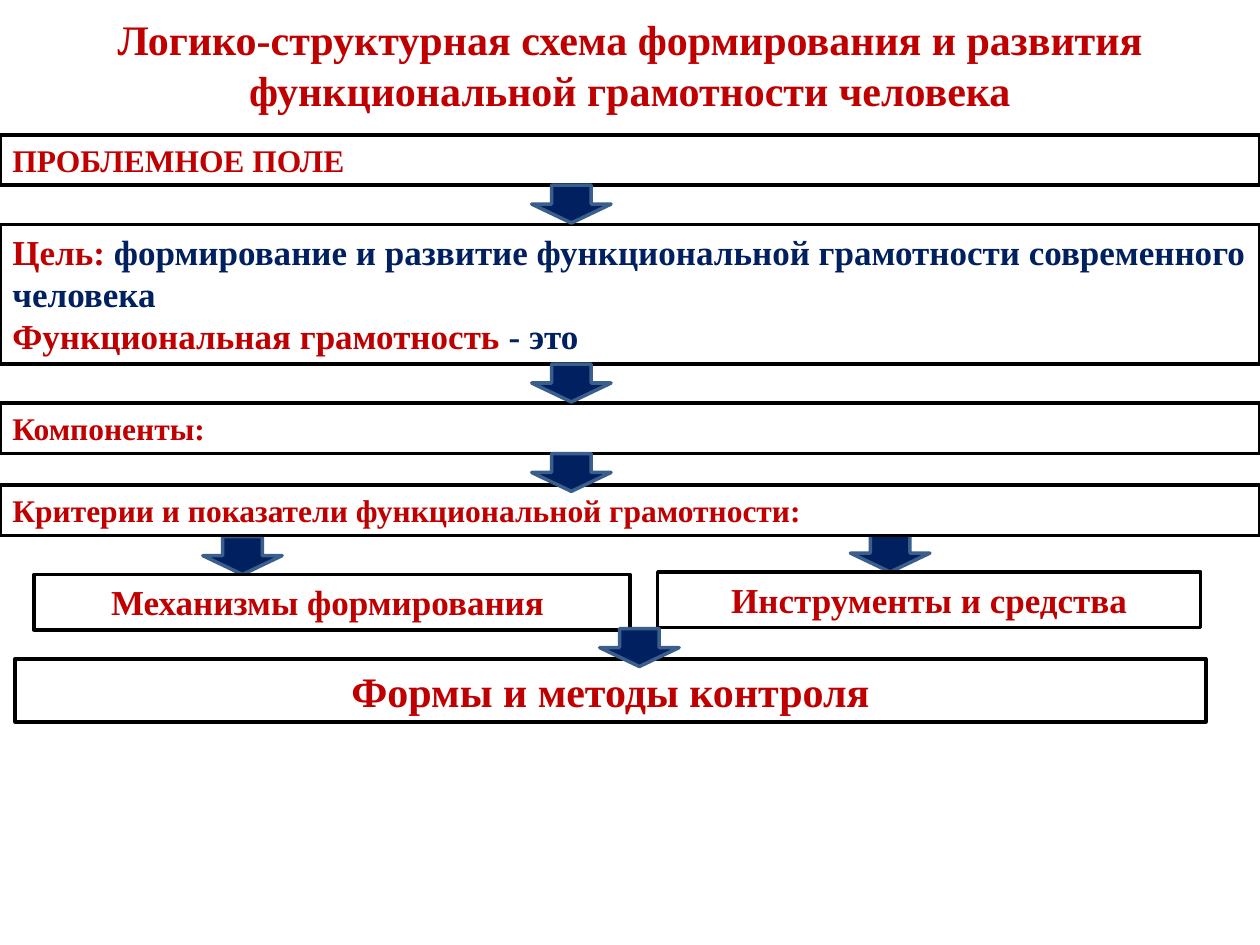
import pptx
import pptx.util
import pptx.dml.color
import pptx.enum.shapes
import pptx.enum.text

COLS, ROWS = 100, 75
ARROW_W, ARROW_H = 6.3, 3
SHAPE = pptx.enum.shapes.MSO_SHAPE
ALIGN = pptx.enum.text.PP_ALIGN
ANCHOR = pptx.enum.text.MSO_ANCHOR
AUTO = pptx.enum.text.MSO_AUTO_SIZE


def rgb(value):
    return pptx.dml.color.RGBColor.from_string(value)


THEME = {
    "font": "Times New Roman",
    "red": rgb("C00000"),
    "navy": rgb("002060"),
    "edge": rgb("3A5F8C"),
    "black": rgb("000000"),
    "white": rgb("FFFFFF"),
    "title": pptx.util.Pt(24),
    "goal": pptx.util.Pt(20),
    "label": pptx.util.Pt(18),
    "line": pptx.util.Pt(2),
}


def set_all(target, values):
    for name, value in values.items():
        setattr(target, name, value)


def to_emu(prs, box):
    x, y, w, h = box
    dx, dy = prs.slide_width / COLS, prs.slide_height / ROWS
    return [round(v) for v in (x * dx, y * dy, w * dx, h * dy)]


def write(tf, paragraphs, size, align, anchor):
    set_all(tf, {"word_wrap": True, "auto_size": AUTO.NONE, "vertical_anchor": anchor})
    for i, runs in enumerate(paragraphs):
        p = tf.add_paragraph() if i else tf.paragraphs[0]
        p.alignment = align
        for text, color in runs:
            r = p.add_run()
            r.text = text
            set_all(r.font, {"name": THEME["font"], "size": THEME[size], "bold": True})
            r.font.color.rgb = THEME[color]


def add_shape(prs, slide, kind, box, fill, line):
    sp = slide.shapes.add_shape(kind, *to_emu(prs, box))
    sp.shadow.inherit = False
    sp.fill.solid()
    sp.fill.fore_color.rgb = THEME[fill]
    sp.line.color.rgb = THEME[line]
    sp.line.width = THEME["line"]
    return sp


def add_box(prs, slide, box, paragraphs, size, align=ALIGN.LEFT):
    sp = add_shape(prs, slide, SHAPE.RECTANGLE, box, "white", "black")
    write(sp.text_frame, paragraphs, size, align, ANCHOR.TOP)


def add_arrow(prs, slide, x, y):
    add_shape(prs, slide, SHAPE.DOWN_ARROW, (x, y, ARROW_W, ARROW_H), "navy", "edge")


def add_title(prs, slide, box, text):
    sp = slide.shapes.title
    set_all(sp, dict(zip(("left", "top", "width", "height"), to_emu(prs, box))))
    write(sp.text_frame, [[(text, "red")]], "title", ALIGN.CENTER, ANCHOR.TOP)


def add_stages(prs, slide, box, stages):
    x, y, w, h = box
    arrow_x = x + 0.422 * w
    for top, height, size, paragraphs in stages:
        add_box(prs, slide, (x, y + top, w, height), paragraphs, size)
    for top, height, *rest in stages[:-1]:
        add_arrow(prs, slide, arrow_x, y + top + height)


def add_branches(prs, slide, box, branches):
    x, y, w, h = box
    for left, top, width, arrow_x, text in branches:
        add_arrow(prs, slide, x + arrow_x, y + top)
        add_box(prs, slide, (x + left, y + top + ARROW_H, width, h - ARROW_H),
                [[(text, "red")]], "goal", ALIGN.CENTER)


def add_control(prs, slide, box, text):
    x, y, w, h = box
    add_box(prs, slide, box, [[(text, "red")]], "title", ALIGN.CENTER)
    add_arrow(prs, slide, x + 46.4, y - 2.4)


def main():
    prs = pptx.Presentation()
    prs.slide_width = pptx.util.Inches(10)
    prs.slide_height = pptx.util.Inches(7.5)
    slide = prs.slides.add_slide(prs.slide_layouts[5])

    add_title(prs, slide, (1.2, 0.6, 97.6, 12.1),
              "Логико-структурная схема формирования и развития "
              "функциональной грамотности человека")
    add_branches(prs, slide, (2.7, 42.4, 92.6, 7.4), [
        (0, 0.2, 47.3, 13.4, "Механизмы формирования "),
        (49.5, 0, 43.1, 64.8, "Инструменты и средства"),
    ])
    add_stages(prs, slide, (0, 10.7, COLS, 31.8), [
        (0, 4, "label", [[("ПРОБЛЕМНОЕ ПОЛЕ", "red")]]),
        (7.1, 11.1, "goal", [
            [("Цель: ", "red"),
             ("формирование и развитие функциональной грамотности "
              "современного человека", "navy")],
            [("Функциональная грамотность ", "red"), ("- это", "navy")],
        ]),
        (21.3, 4, "label", [[("Компоненты:", "red")]]),
        (27.8, 4, "label",
         [[("Критерии и показатели функциональной грамотности:", "red")]]),
    ])
    add_control(prs, slide, (1.2, 52.3, 94.5, 5), "Формы и методы контроля")
    prs.save("out.pptx")


if __name__ == "__main__":
    main()
